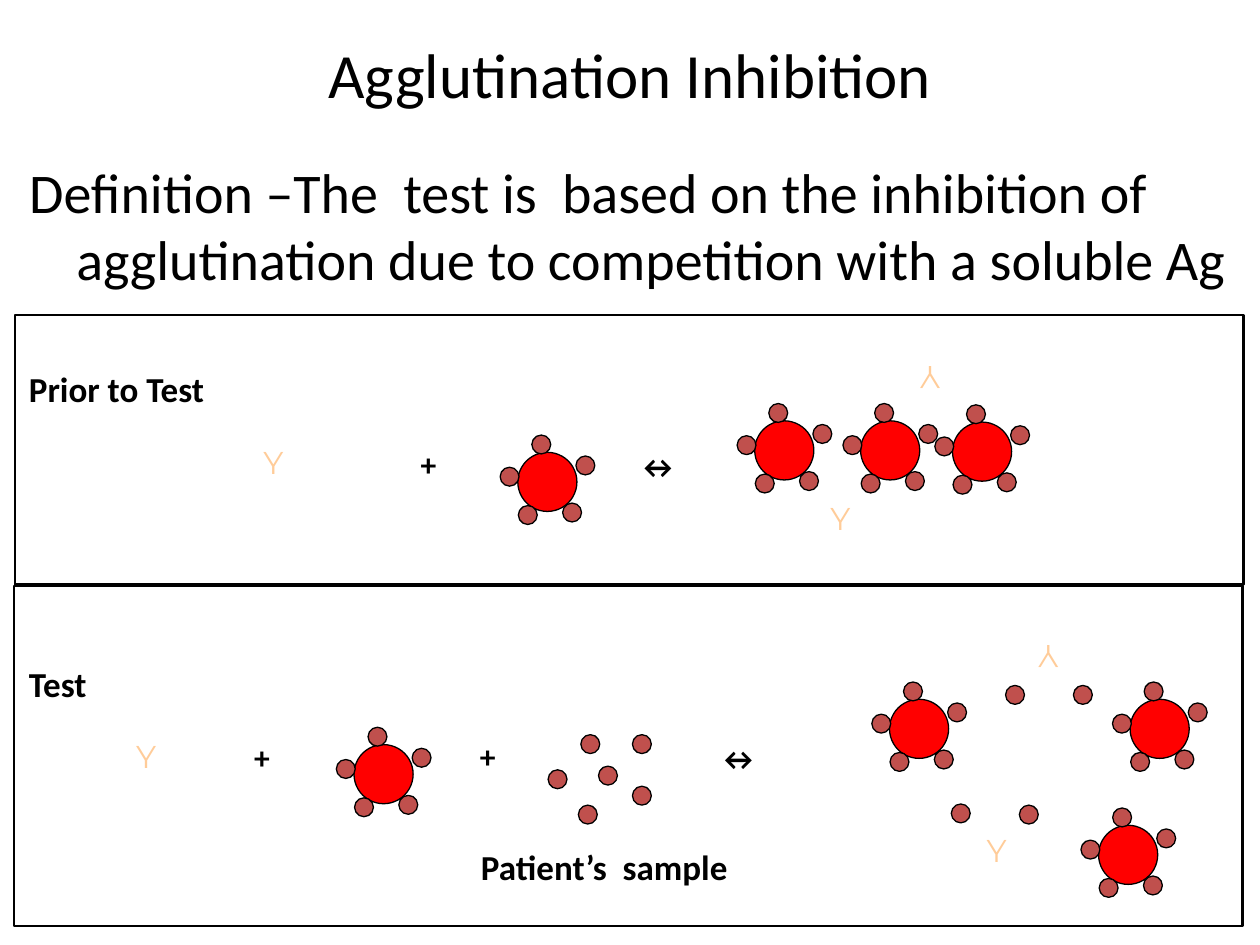
import pptx
import pptx.util
import pptx.dml.color
import pptx.enum.shapes
import pptx.enum.text
import pptx.oxml

Pt = pptx.util.Pt
ALIGN = pptx.enum.text.PP_ALIGN
ANCHOR = pptx.enum.text.MSO_ANCHOR
SHAPE = pptx.enum.shapes.MSO_SHAPE

COLORS = {"text": "000000", "panel": "FFFFFF", "cell": "FF0000",
          "antigen": "C0504D", "antibody": "FFCC99"}

# Content: all places are left, top (and width, height) in points
TITLE = "Agglutination Inhibition"
DEFINITION = ("Definition –The  test is  based on the inhibition of "
              "agglutination due to competition with a soluble Ag")

PANELS = [
    {"frame": (8.6, 180, 702, 154),
     "labels": [("Prior to Test", 9.4, 206.6, 123, 31)],
     "symbols": [("+", 233.3, 250.6, 32, 45), ("↔", 357.1, 252, 47, 85)],
     "antibodies": [(127.4, 249.8, 0), (451.4, 281.5, 0), (502.6, 185.8, 180)],
     "cells": [(295.9, 258.5), (431.3, 240.5), (491.8, 240.5), (544.3, 241.2)],
     "antigens": []},
    {"frame": (8, 334.8, 702, 194.4),
     "labels": [("Test", 9.4, 375.1, 51, 31),
                ("Patient’s  sample", 267.8, 479.5, 160, 31)],
     "symbols": [("+", 138.2, 418.3, 32, 45), ("+", 267.1, 417.6, 32, 45),
                 ("↔", 403.2, 419, 47, 85)],
     "antibodies": [(54.7, 417.6, 0), (540.7, 471.6, 0), (570.2, 345.6, 180)],
     "cells": [(202.3, 425.5), (508.3, 399.6), (645.8, 399.6), (627.8, 471.6)],
     "antigens": [(313.2, 439.9), (331.9, 419.8), (361.4, 449.3),
                  (342, 437.8), (361.4, 419.8), (330.5, 460.1),
                  (543.6, 459.4), (582.5, 460.1),
                  (574.6, 391.7), (613.4, 391.7)]},
]

CELL_SIZE = 33.8
ANTIGEN_SIZE = 10.8
CELL_ANTIGENS = [(8, -9.9), (33.2, 2.1), (25.6, 29), (-10.1, 8.5), (0.3, 30.4)]
ANTIBODY_BOX = (57.6, 45)

FONTS = {"title": {"name": "Calibri", "size": Pt(36), "bold": False},
         "body": {"name": "Calibri", "size": Pt(32), "bold": False},
         "label": {"name": "Calibri", "size": Pt(20), "bold": True},
         "symbol": {"name": "Calibri", "size": Pt(18), "bold": True},
         "antibody": {"name": "Montserrat", "size": Pt(18), "bold": False}}


def rgb(name):
    return pptx.dml.color.RGBColor.from_string(COLORS[name])


def set_values(target, values):
    for name, value in values.items():
        setattr(target, name, value)


def write(shape, text, style, color="text", align=ALIGN.LEFT, anchor=ANCHOR.TOP):
    set_values(shape.text_frame, {"word_wrap": True, "vertical_anchor": anchor,
                                  "auto_size": pptx.enum.text.MSO_AUTO_SIZE.NONE})
    paragraph = shape.text_frame.paragraphs[0]
    set_values(paragraph, {"alignment": align, "space_before": Pt(0)})
    run = paragraph.add_run()
    run.text = text
    set_values(run.font, FONTS[style])
    run.font.color.rgb = rgb(color)
    return paragraph, run


def add_text(shapes, box, *text_values, **options):
    shape = shapes.add_textbox(*map(Pt, box))
    return shape, write(shape, *text_values, **options)[1]


def add_figure(shapes, kind, box, color, line_width):
    shape = shapes.add_shape(kind, *map(Pt, box))
    shape.shadow.inherit = False
    shape.fill.solid()
    shape.fill.fore_color.rgb = rgb(color)
    shape.line.color.rgb = rgb("text")
    shape.line.width = Pt(line_width)


def add_circle(shapes, left, top, size, color):
    add_figure(shapes, SHAPE.OVAL, (left, top, size, size), color, 0.75)


def add_cell(shapes, left, top):
    add_circle(shapes, left, top, CELL_SIZE, "cell")
    for across, down in CELL_ANTIGENS:
        add_circle(shapes, left + across, top + down, ANTIGEN_SIZE, "antigen")


def add_antibody(shapes, left, top, rotation):
    shape, run = add_text(shapes, (left, top, *ANTIBODY_BOX), "Y", "antibody",
                          color="antibody", align=ALIGN.CENTER)
    shape.rotation = rotation
    outline = pptx.oxml.parse_xml(
        '<a:ln xmlns:a="http://schemas.openxmlformats.org/drawingml/2006/main" w="9525">'
        f'<a:solidFill><a:srgbClr val="{COLORS["text"]}"/></a:solidFill></a:ln>')
    run.font._element.insert(0, outline)


def add_panel(slide, panel):
    shapes = slide.shapes.add_group_shape().shapes
    add_figure(shapes, SHAPE.RECTANGLE, panel["frame"], "panel", 1.5)
    for antibody in panel["antibodies"]:
        add_antibody(shapes, *antibody)
    for style in ("symbol", "label"):
        for text, *box in panel[style + "s"]:
            add_text(shapes, box, text, style)
    for cell in panel["cells"]:
        add_cell(shapes, *cell)
    for left, top in panel["antigens"]:
        add_circle(shapes, left, top, ANTIGEN_SIZE, "antigen")


def place(shape, left, top, width, height):
    set_values(shape, {"left": Pt(left), "top": Pt(top),
                       "width": Pt(width), "height": Pt(height)})


def main():
    presentation = pptx.Presentation()
    set_values(presentation, {"slide_width": Pt(720), "slide_height": Pt(540)})
    slide = presentation.slides.add_slide(presentation.slide_layouts[1])

    # Title and definition
    title, body = slide.placeholders
    place(title, 0, 18, 720, 48)
    write(title, TITLE, "title", align=ALIGN.CENTER, anchor=ANCHOR.MIDDLE)
    place(body, 9.4, 86.4, 702, 102)
    paragraph, _ = write(body, DEFINITION, "body")
    properties = paragraph._p.get_or_add_pPr()
    properties.set("marL", str(Pt(27)))
    properties.set("indent", str(Pt(-27)))
    properties.append(pptx.oxml.parse_xml(
        '<a:buNone xmlns:a="http://schemas.openxmlformats.org/drawingml/2006/main"/>'))

    # Situation before and during the test
    for panel in PANELS:
        add_panel(slide, panel)

    presentation.save("out.pptx")


if __name__ == "__main__":
    main()
